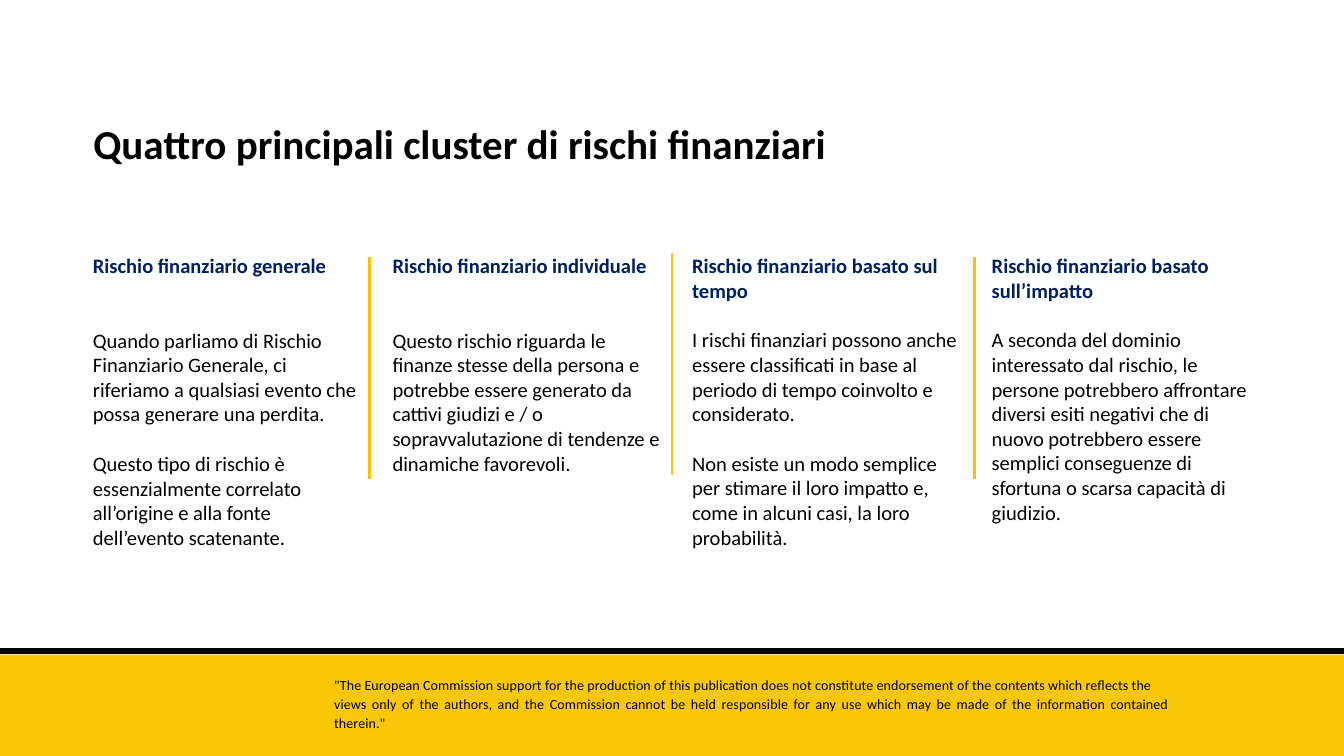
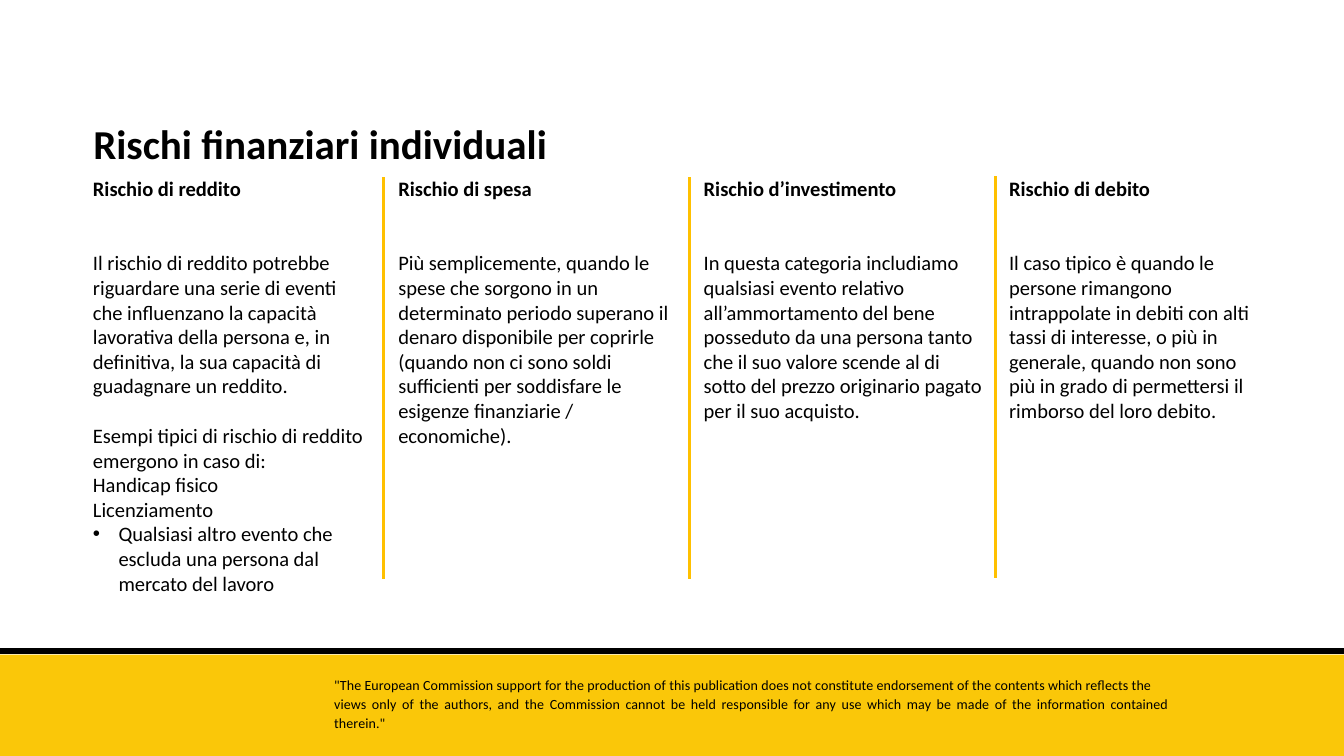
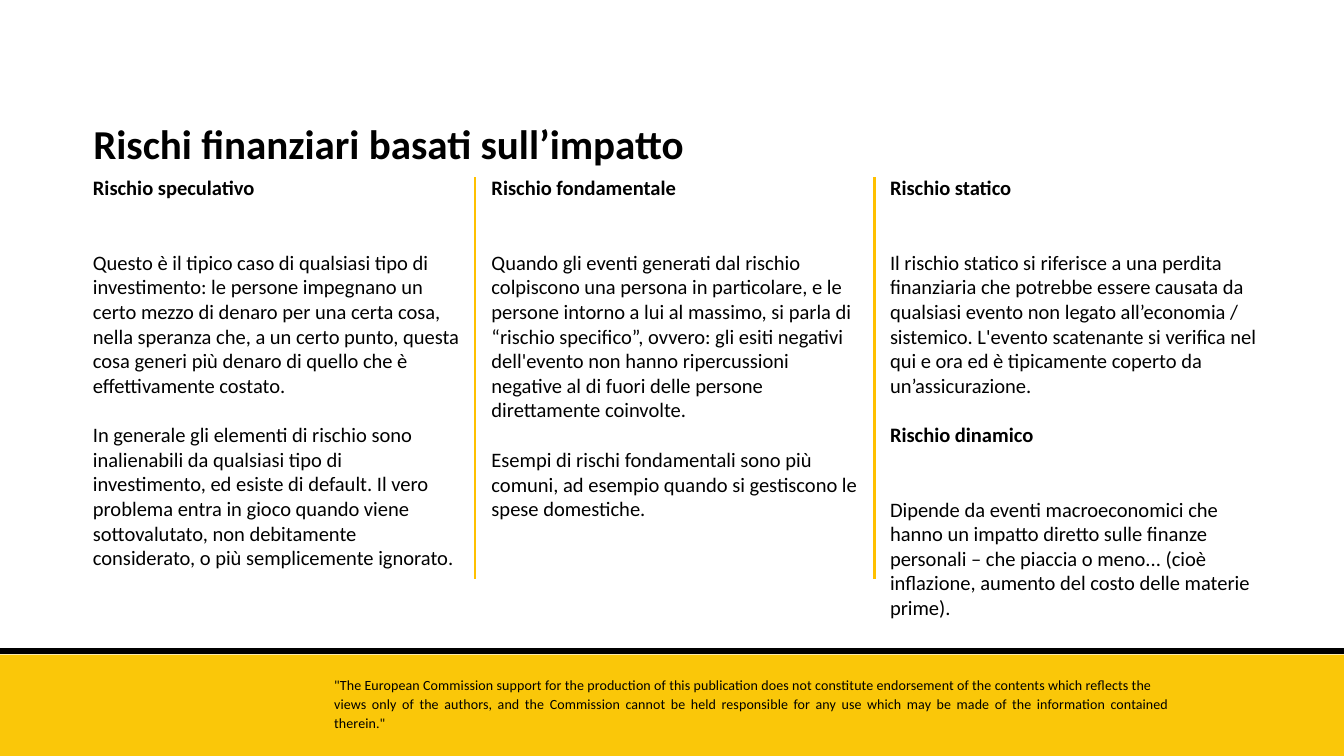
from dataclasses import dataclass

from lxml.etree import SubElement
from pptx import Presentation
from pptx.dml.color import RGBColor
from pptx.enum.shapes import MSO_CONNECTOR, MSO_SHAPE
from pptx.enum.text import MSO_AUTO_SIZE, PP_ALIGN
from pptx.oxml.ns import qn
from pptx.util import Pt


@dataclass(frozen=True)
class Theme:
    font: str = "Calibri"
    black: str = "000000"
    navy: str = "002060"
    band: str = "FAC709"
    divider: str = "FFC000"
    title_size: float = 44
    body_size: float = 22
    footer_size: float = 15
    line: float = 26.6
    inset: float = 7.2
    bullet_indent: float = 27.4


T = Theme()
WIDTH, HEIGHT = 1440, 810
BAND_TOP = 701.5

DISCLAIMER = [
    ("\"The European Commission support for the production of this publication does not "
     "constitute endorsement of the contents which reflects the", {"spacing": Pt(16.1)}),
    ("views only of the authors, and the Commission cannot be held responsible for any use "
     "which may be made of the information contained therein.\"", {"spacing": 1.13}),
]


def head(text, gap=0):
    return text, {"bold": True, "gap": gap * T.line}


def body(text, gap=0, bullet=False):
    return text, {"gap": gap * T.line, "bullet": bullet}


SLIDES = [
    {
        "title": "Quattro principali cluster di rischi finanziari",
        "title_width": 818.6,
        "head_color": T.navy,
        "top": 267.8, "left": 92.5, "pitch": 321, "widths": (305.3, 306.7, 306.7, 306.7),
        "divider_left": 396, "divider_pitch": 324,
        "divider_tops": (275, 271.4, 275), "divider_length": 238,
        "columns": [
            (12, [
                head("Rischio finanziario generale"),
                body("Quando parliamo di Rischio Finanziario Generale, ci riferiamo a qualsiasi "
                     "evento che possa generare una perdita.", 2),
                body("Questo tipo di rischio è essenzialmente correlato all’origine e alla fonte "
                     "dell’evento scatenante.", 1),
            ]),
            (9, [
                head("Rischio finanziario individuale"),
                body("Questo rischio riguarda le finanze stesse della persona e potrebbe essere "
                     "generato da cattivi giudizi e / o sopravvalutazione di tendenze e dinamiche "
                     "favorevoli.", 2),
            ]),
            (12, [
                head("Rischio finanziario basato sul tempo"),
                body("I rischi finanziari possono anche essere classificati in base al periodo di "
                     "tempo coinvolto e considerato.", 1),
                body("Non esiste un modo semplice per stimare il loro impatto e, come in alcuni "
                     "casi, la loro probabilità.", 1),
            ]),
            (11, [
                head("Rischio finanziario basato sull’impatto"),
                body("A seconda del dominio interessato dal rischio, le persone potrebbero "
                     "affrontare diversi esiti negativi che di nuovo potrebbero essere semplici "
                     "conseguenze di sfortuna o scarsa capacità di giudizio.", 1),
            ]),
        ],
    },
    {
        "title": "Rischi finanziari individuali",
        "title_width": 738,
        "head_color": T.black,
        "top": 185, "left": 92.5, "pitch": 327.2, "widths": (311, 312.5, 312.5, 288),
        "divider_left": 411.1, "divider_pitch": 327.6,
        "divider_tops": (190, 190, 188.6), "divider_length": 430.6,
        "columns": [
            (17, [
                head("Rischio di reddito"),
                body("Il rischio di reddito potrebbe riguardare una serie di eventi che influenzano "
                     "la capacità lavorativa della persona e, in definitiva, la sua capacità di "
                     "guadagnare un reddito.", 2),
                body("Esempi tipici di rischio di reddito emergono in caso di:", 1),
                body("Handicap fisico"),
                body("Licenziamento"),
                body("Qualsiasi altro evento che escluda una persona dal mercato del lavoro",
                     bullet=True),
            ]),
            (11, [
                head("Rischio di spesa"),
                body("Più semplicemente, quando le spese che sorgono in un determinato periodo "
                     "superano il denaro disponibile per coprirle (quando non ci sono soldi "
                     "sufficienti per soddisfare le esigenze finanziarie / economiche).", 2),
            ]),
            (10, [
                head("Rischio d’investimento"),
                body("In questa categoria includiamo qualsiasi evento relativo all’ammortamento "
                     "del bene posseduto da una persona tanto che il suo valore scende al di sotto "
                     "del prezzo originario pagato per il suo acquisto.", 2),
            ]),
            (10, [
                head("Rischio di debito"),
                body("Il caso tipico è quando le persone rimangono intrappolate in debiti con alti "
                     "tassi di interesse, o più in generale, quando non sono più in grado di "
                     "permettersi il rimborso del loro debito.", 2),
            ]),
        ],
    },
    {
        "title": "Rischi finanziari basati sull’impatto",
        "title_width": 738,
        "head_color": T.black,
        "top": 184.3, "left": 92.5, "pitch": 427, "widths": (406.8, 409, 409),
        "divider_left": 509, "divider_pitch": 428.4,
        "divider_tops": (190, 190), "divider_length": 430,
        "columns": [
            (16, [
                head("Rischio speculativo"),
                body("Questo è il tipico caso di qualsiasi tipo di investimento: le persone "
                     "impegnano un certo mezzo di denaro per una certa cosa, nella speranza che, a "
                     "un certo punto, questa cosa generi più denaro di quello che è effettivamente "
                     "costato.", 2),
                body("In generale gli elementi di rischio sono inalienabili da qualsiasi tipo di "
                     "investimento, ed esiste di default. Il vero problema entra in gioco quando "
                     "viene sottovalutato, non debitamente considerato, o più semplicemente "
                     "ignorato.", 1),
            ]),
            (14, [
                head("Rischio fondamentale"),
                body("Quando gli eventi generati dal rischio colpiscono una persona in particolare, "
                     "e le persone intorno a lui al massimo, si parla di “rischio specifico”, "
                     "ovvero: gli esiti negativi dell'evento non hanno ripercussioni negative al di "
                     "fuori delle persone direttamente coinvolte.", 2),
                body("Esempi di rischi fondamentali sono più comuni, ad esempio quando si "
                     "gestiscono le spese domestiche.", 1),
            ]),
            (18, [
                head("Rischio statico"),
                body("Il rischio statico si riferisce a una perdita finanziaria che potrebbe essere "
                     "causata da qualsiasi evento non legato all’economia / sistemico. L'evento "
                     "scatenante si verifica nel qui e ora ed è tipicamente coperto da "
                     "un’assicurazione.", 2),
                head("Rischio dinamico", 1),
                body("Dipende da eventi macroeconomici che hanno un impatto diretto sulle finanze "
                     "personali – che piaccia o meno... (cioè inflazione, aumento del costo delle "
                     "materie prime).", 2),
            ]),
        ],
    },
]


def rgb(color):
    return RGBColor.from_string(color)


def add_bullet(p):
    pPr = p._p.get_or_add_pPr()
    pPr.set("marL", str(Pt(T.bullet_indent)))
    pPr.set("indent", str(-Pt(T.bullet_indent)))
    SubElement(pPr, qn("a:buFont")).set("typeface", "Arial")
    SubElement(pPr, qn("a:buChar")).set("char", "•")


def write(p, text, size=T.body_size, color=T.black, bold=False, align=None,
          gap=0, spacing=None, tracking=None, bullet=False):
    if bullet:
        add_bullet(p)
    if align is not None:
        p.alignment = align
    if gap:
        p.space_before = Pt(gap)
    if spacing:
        p.line_spacing = spacing
    r = p.add_run()
    r.text = text
    r.font.name, r.font.size, r.font.bold = T.font, Pt(size), bold
    r.font.color.rgb = rgb(color)
    if tracking:
        r._r.get_or_add_rPr().set("spc", str(tracking))


def add_text(s, box, paragraphs, **fmt):
    tf = s.shapes.add_textbox(*map(Pt, box)).text_frame
    tf.word_wrap = True
    tf.auto_size = MSO_AUTO_SIZE.SHAPE_TO_FIT_TEXT
    for i, (text, own) in enumerate(paragraphs):
        p = tf.add_paragraph() if i else tf.paragraphs[0]
        write(p, text, **{**fmt, **own})


def add_line(s, x1, y1, x2, y2, color, width):
    line = s.shapes.add_connector(MSO_CONNECTOR.STRAIGHT, *map(Pt, (x1, y1, x2, y2)))
    line.line.color.rgb = rgb(color)
    line.line.width = Pt(width)
    SubElement(line._element.spPr, qn("a:effectLst"))


def add_footer(s):
    sp = s.shapes.add_shape(MSO_SHAPE.RECTANGLE, 0, Pt(BAND_TOP), Pt(WIDTH),
                            Pt(HEIGHT - BAND_TOP))
    sp.shadow.inherit = False
    sp.fill.solid()
    sp.fill.fore_color.rgb = rgb(T.band)
    sp.line.fill.background()
    add_line(s, 0, 697.5, WIDTH, 697.5, T.black, 6.75)
    add_text(s, (351, 723, 909.4, 63.4), DISCLAIMER, size=T.footer_size,
             align=PP_ALIGN.JUSTIFY, tracking=10)


def add_columns(s, c):
    for i, ((rows, paragraphs), width) in enumerate(zip(c["columns"], c["widths"])):
        box = (c["left"] + i * c["pitch"], c["top"], width, rows * T.line + T.inset)
        colored = [(text, {"color": c["head_color"], **own} if own.get("bold") else own)
                   for text, own in paragraphs]
        add_text(s, box, colored)
    for i, top in enumerate(c["divider_tops"]):
        x = c["divider_left"] + i * c["divider_pitch"]
        add_line(s, x, top, x, top + c["divider_length"], T.divider, 3)


def main():
    prs = Presentation()
    prs.slide_width, prs.slide_height = Pt(WIDTH), Pt(HEIGHT)
    for c in SLIDES:
        s = prs.slides.add_slide(prs.slide_layouts[6])
        add_footer(s)
        add_text(s, (92.9, 123.8, c["title_width"], 60.5), [(c["title"], {})],
                 size=T.title_size, bold=True)
        add_columns(s, c)
    prs.save("out.pptx")


if __name__ == "__main__":
    main()
